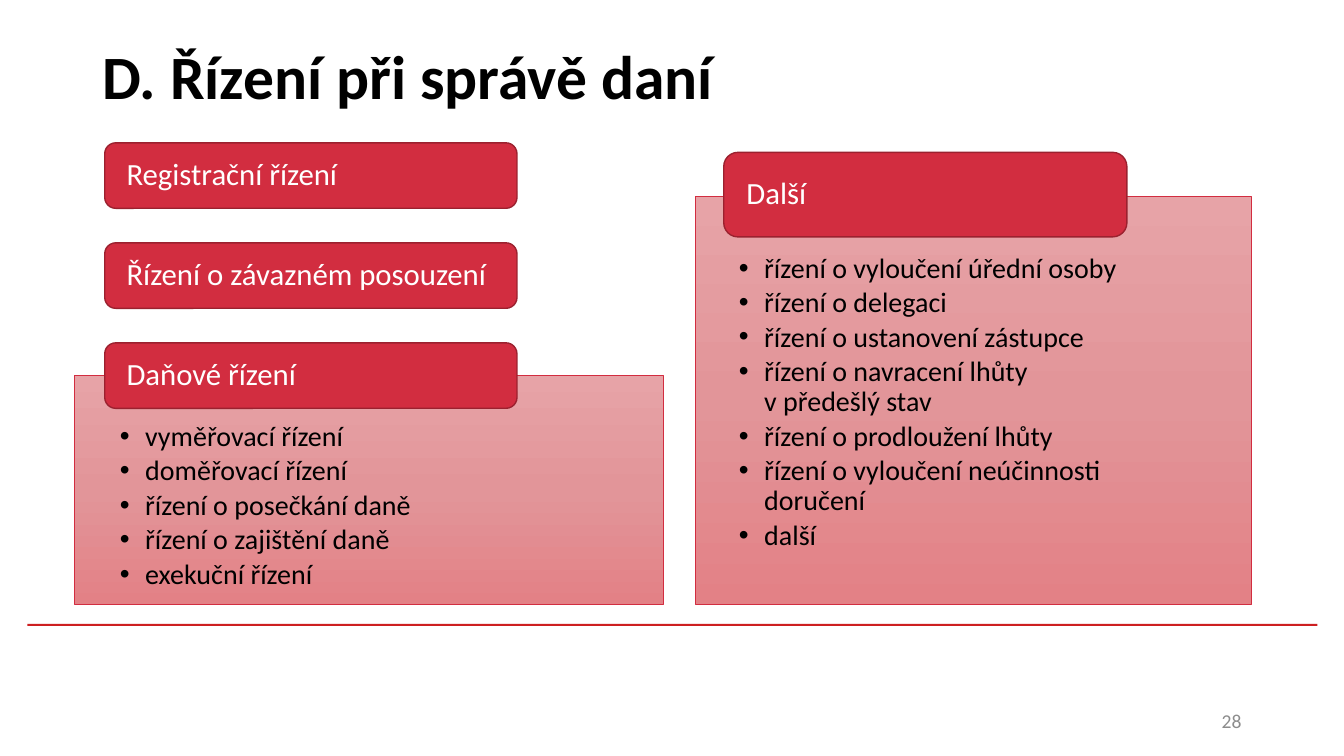
from dataclasses import dataclass

from pptx import Presentation
from pptx import util as u
from pptx.dml.color import RGBColor
from pptx.enum import shapes, text
from pptx.oxml import parse_xml
from pptx.oxml.ns import nsdecls

COLORS = {
    "rule": "CD1F21", "red": "D22D40", "edge": "9B212F", "white": "FFFFFF",
    "black": "000000", "gray": "8C8C8C",
    "top": "E7A3A7", "mid": "E29599", "end": "E38186",
}
FONT = "Calibri"
STEP = 2.52


@dataclass
class Box:
    left: float
    top: float
    width: float
    height: float

    def place(self) -> tuple:
        return tuple(u.Cm(n) for n in (self.left, self.top, self.width, self.height))


@dataclass
class Label:
    words: str
    box: Box


@dataclass
class Panel:
    items: list[str]
    box: Box
    side: float
    head: float


def color(name: str) -> RGBColor:
    return RGBColor.from_string(COLORS[name])


def style(para, size: float, tint: str, bold: bool = False) -> None:
    font = para.font
    font.name, font.size, font.bold = FONT, u.Pt(size), bold
    font.color.rgb = color(tint)


def add_text(slide, words: str, box: Box, size: float, tint: str,
             align=text.PP_ALIGN.LEFT, bold: bool = False) -> None:
    frame = slide.shapes.add_textbox(*box.place()).text_frame
    frame.word_wrap = True
    frame.vertical_anchor = text.MSO_ANCHOR.MIDDLE
    para = frame.paragraphs[0]
    para.text, para.alignment = words, align
    style(para, size, tint, bold)


def add_form(slide, kind, box: Box):
    form = slide.shapes.add_shape(kind, *box.place())
    form.shadow.inherit = False
    return form


def add_rule(slide, box: Box) -> None:
    rule = add_form(slide, shapes.MSO_SHAPE.RECTANGLE, box)
    rule.fill.solid()
    rule.fill.fore_color.rgb = color("rule")
    rule.line.fill.background()


def add_label(slide, label: Label) -> None:
    form = add_form(slide, shapes.MSO_SHAPE.ROUNDED_RECTANGLE, label.box)
    form.fill.solid()
    form.fill.fore_color.rgb = color("red")
    form.line.color.rgb = color("edge")
    form.line.width = u.Pt(1)
    frame = form.text_frame
    frame.word_wrap = True
    frame.vertical_anchor = text.MSO_ANCHOR.MIDDLE
    frame.margin_left = frame.margin_right = u.Cm(0.47)
    frame.margin_top = frame.margin_bottom = 0
    para = frame.paragraphs[0]
    para.text, para.alignment = label.words, text.PP_ALIGN.LEFT
    para.line_spacing = 0.9
    style(para, 22, "white")


def add_panel(slide, panel: Panel) -> None:
    form = add_form(slide, shapes.MSO_SHAPE.RECTANGLE, panel.box)
    stops = "".join(
        f'<a:gs pos="{pos}"><a:srgbClr val="{COLORS[name]}"/></a:gs>'
        for pos, name in ((0, "top"), (50000, "mid"), (100000, "end")))
    form._element.spPr.insert(2, parse_xml(
        f'<a:gradFill {nsdecls("a")} rotWithShape="1"><a:gsLst>{stops}</a:gsLst>'
        '<a:lin ang="5400000" scaled="0"/></a:gradFill>'))
    form.line.color.rgb = color("red")
    form.line.width = u.Pt(0.5)
    frame = form.text_frame
    frame.word_wrap = True
    frame.vertical_anchor = text.MSO_ANCHOR.TOP
    frame.margin_left = frame.margin_right = u.Cm(panel.side)
    frame.margin_top, frame.margin_bottom = u.Cm(panel.head), u.Cm(0.41)
    for i, item in enumerate(panel.items):
        para = frame.add_paragraph() if i else frame.paragraphs[0]
        para.text, para.alignment = item, text.PP_ALIGN.LEFT
        para.line_spacing, para.space_after = 0.9, u.Pt(3)
        props = para._p.get_or_add_pPr()
        dent = u.Cm(0.64)
        props.set("marL", str(dent))
        props.set("indent", str(-dent))
        props.append(parse_xml(f'<a:buFont {nsdecls("a")} typeface="Arial"/>'))
        props.append(parse_xml(f'<a:buChar {nsdecls("a")} char="•"/>'))
        style(para, 20, "black")


PANELS = [
    Panel(["vyměřovací řízení", "doměřovací řízení", "řízení o posečkání daně",
           "řízení o zajištění daně", "exekuční řízení"],
          Box(1.88, 9.47, 14.83, 5.77), 1.14, 1.17),
    Panel(["řízení o vyloučení úřední osoby", "řízení o delegaci",
           "řízení o ustanovení zástupce", "řízení o navracení lhůty \nv předešlý stav",
           "řízení o prodloužení lhůty", "řízení o vyloučení neúčinnosti doručení",
           "další"],
          Box(17.53, 4.95, 14, 10.29), 1.09, 1.45),
]
NAMES = ["Registrační řízení", "Řízení o závazném posouzení", "Daňové řízení"]
LABELS = [Label(name, Box(2.64, 3.6 + i * STEP, 10.39, 1.65))
          for i, name in enumerate(NAMES)]
LABELS.append(Label("Další", Box(18.24, 3.84, 10.16, 2.13)))


def main() -> None:
    deck = Presentation()
    deck.slide_width, deck.slide_height = u.Cm(33.87), u.Cm(19.05)
    slide = deck.slides.add_slide(deck.slide_layouts[6])
    add_rule(slide, Box(0.69, 15.72, 32.51, 0.05))
    add_text(slide, "D. Řízení při správě daní", Box(2.33, 0.05, 29.21, 3.68),
             44, "black", bold=True)
    add_text(slide, "28", Box(23.92, 17.66, 7.62, 1.01), 14, "gray",
             text.PP_ALIGN.RIGHT)
    for panel in PANELS:
        add_panel(slide, panel)
    for label in LABELS:
        add_label(slide, label)
    deck.save("out.pptx")


if __name__ == "__main__":
    main()
